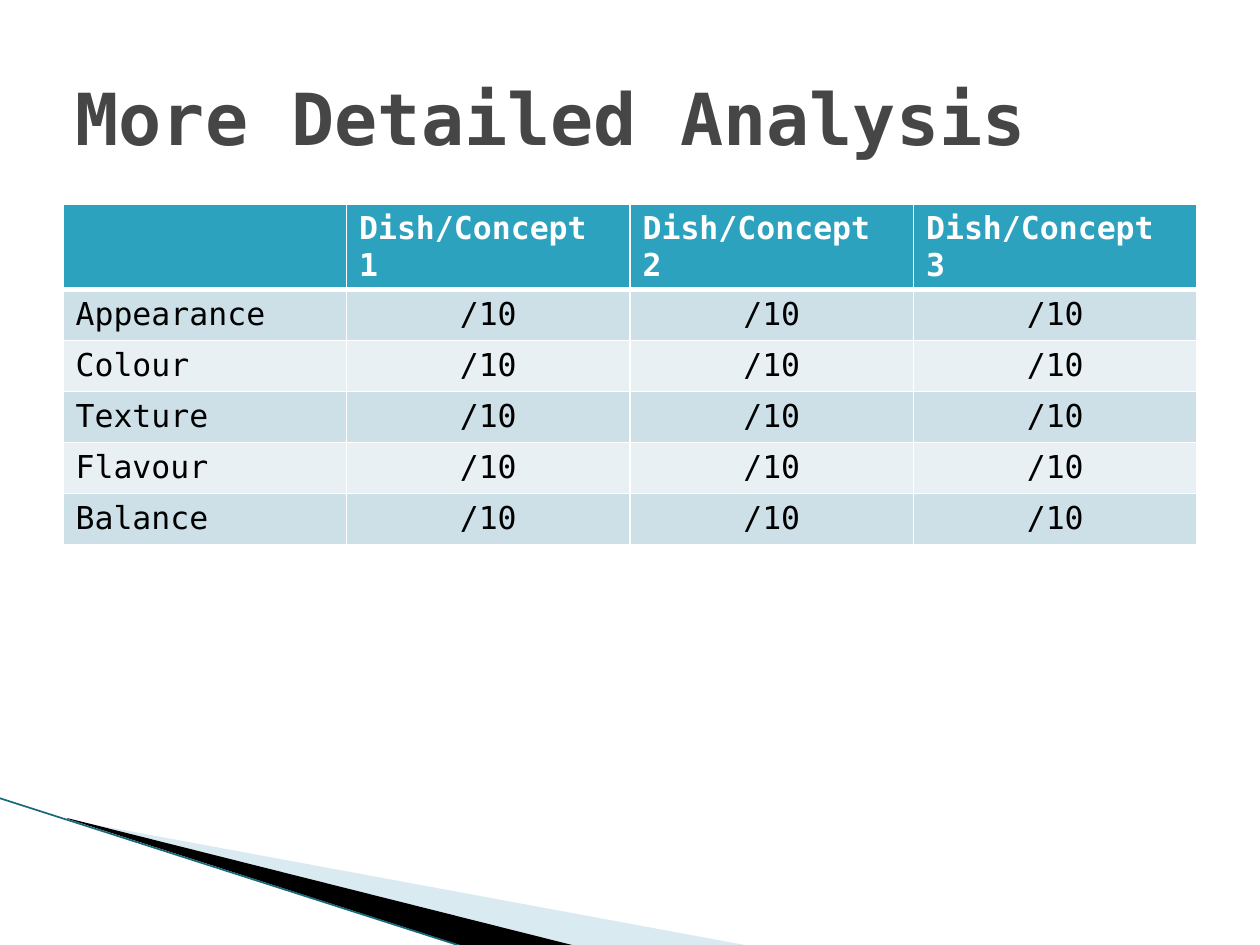
from dataclasses import dataclass

import lxml.etree
import pptx
import pptx.dml.color
import pptx.enum.shapes
import pptx.enum.text
import pptx.oxml
import pptx.oxml.ns
import pptx.util

SCALE = 914400 / 126
FONT = "DejaVu Sans Mono"
COLORS = {
    "title": "464646", "white": "FFFFFF", "black": "000000",
    "head": "2DA2BF", "odd": "CDE0E8", "even": "E8F0F4",
    "pale": "A0CBDC", "edge": "16697A",
}
HEADS = ["", "Dish/Concept 1", "Dish/Concept 2", "Dish/Concept 3"]
TRAITS = ["Appearance", "Colour", "Texture", "Flavour", "Balance"]


@dataclass
class Wedge:
    points: list[tuple[int, int]]
    color: str
    alpha: int = 100


WEDGES = [
    Wedge([(69, 820), (750, 946), (575, 946), (69, 819)], "pale", 40),
    Wedge([(67, 818), (576, 946), (469, 948), (68, 819)], "black"),
]


def px(size: int) -> int:
    return round(size * SCALE)


def rgb(name: str) -> pptx.dml.color.RGBColor:
    return pptx.dml.color.RGBColor.from_string(COLORS[name])


def style(font, size: int, color: str, bold: bool) -> None:
    font.name = FONT
    font.size = pptx.util.Pt(size)
    font.bold = bold
    font.color.rgb = rgb(color)


def draw_wedge(slide, wedge: Wedge) -> None:
    pen = slide.shapes.build_freeform(*wedge.points[0], scale=SCALE)
    pen.add_line_segments(wedge.points[1:], close=True)
    shape = pen.convert_to_shape()
    shape.shadow.inherit = False
    shape.fill.solid()
    shape.fill.fore_color.rgb = rgb(wedge.color)
    shape.line.fill.background()
    if wedge.alpha < 100:
        color = shape.fill._xPr.find(".//" + pptx.oxml.ns.qn("a:srgbClr"))
        alpha = lxml.etree.SubElement(color, pptx.oxml.ns.qn("a:alpha"))
        alpha.set("val", str(wedge.alpha * 1000))


def draw_edge(slide) -> None:
    kind = pptx.enum.shapes.MSO_CONNECTOR.STRAIGHT
    line = slide.shapes.add_connector(kind, px(-1), px(798), px(467), px(948))
    line.line.color.rgb = rgb("edge")
    line.line.width = pptx.util.Pt(0.95)
    props = line._element.spPr
    lxml.etree.SubElement(props, pptx.oxml.ns.qn("a:effectLst"))


def add_borders(cell, top: int, bottom: int) -> None:
    props = cell._tc.get_or_add_tcPr()
    for side, width in (("L", 1), ("R", 1), ("T", top), ("B", bottom)):
        props.append(pptx.oxml.parse_xml(
            f'<a:ln{side} {pptx.oxml.ns.nsdecls("a")} w="{width * 12700}">'
            f'<a:solidFill><a:srgbClr val="{COLORS["white"]}"/></a:solidFill>'
            f'</a:ln{side}>'))


def draw_table(slide) -> None:
    rows = [HEADS] + [[trait] + ["/10"] * 3 for trait in TRAITS]
    frame = slide.shapes.add_table(
        len(rows), len(HEADS), px(63), px(204), px(1134), px(51 * len(rows)))
    table = frame.table
    for r, row in enumerate(rows):
        head = r == 0
        fill = "head" if head else "odd" if r % 2 else "even"
        for c, text in enumerate(row):
            cell = table.cell(r, c)
            add_borders(cell, 3 if r == 1 else 1, 3 if head else 1)
            cell.fill.solid()
            cell.fill.fore_color.rgb = rgb(fill)
            cell.text_frame.text = text
            para = cell.text_frame.paragraphs[0]
            style(para.font, 18, "white" if head else "black", head)
            if c and not head:
                para.alignment = pptx.enum.text.PP_ALIGN.CENTER


def set_title(slide) -> None:
    title = slide.shapes.title
    title.left, title.top = px(63), px(38)
    title.width, title.height = px(1134), px(158)
    frame = title.text_frame
    frame.text = "More Detailed Analysis"
    frame.word_wrap = True
    frame.vertical_anchor = pptx.enum.text.MSO_ANCHOR.MIDDLE
    para = frame.paragraphs[0]
    para.alignment = pptx.enum.text.PP_ALIGN.LEFT
    style(para.runs[0].font, 41, "title", True)


def main() -> None:
    deck = pptx.Presentation()
    deck.slide_width, deck.slide_height = px(1260), px(945)
    slide = deck.slides.add_slide(deck.slide_layouts[5])
    set_title(slide)
    for wedge in WEDGES:
        draw_wedge(slide, wedge)
    draw_edge(slide)
    draw_table(slide)
    deck.save("out.pptx")


if __name__ == "__main__":
    main()
